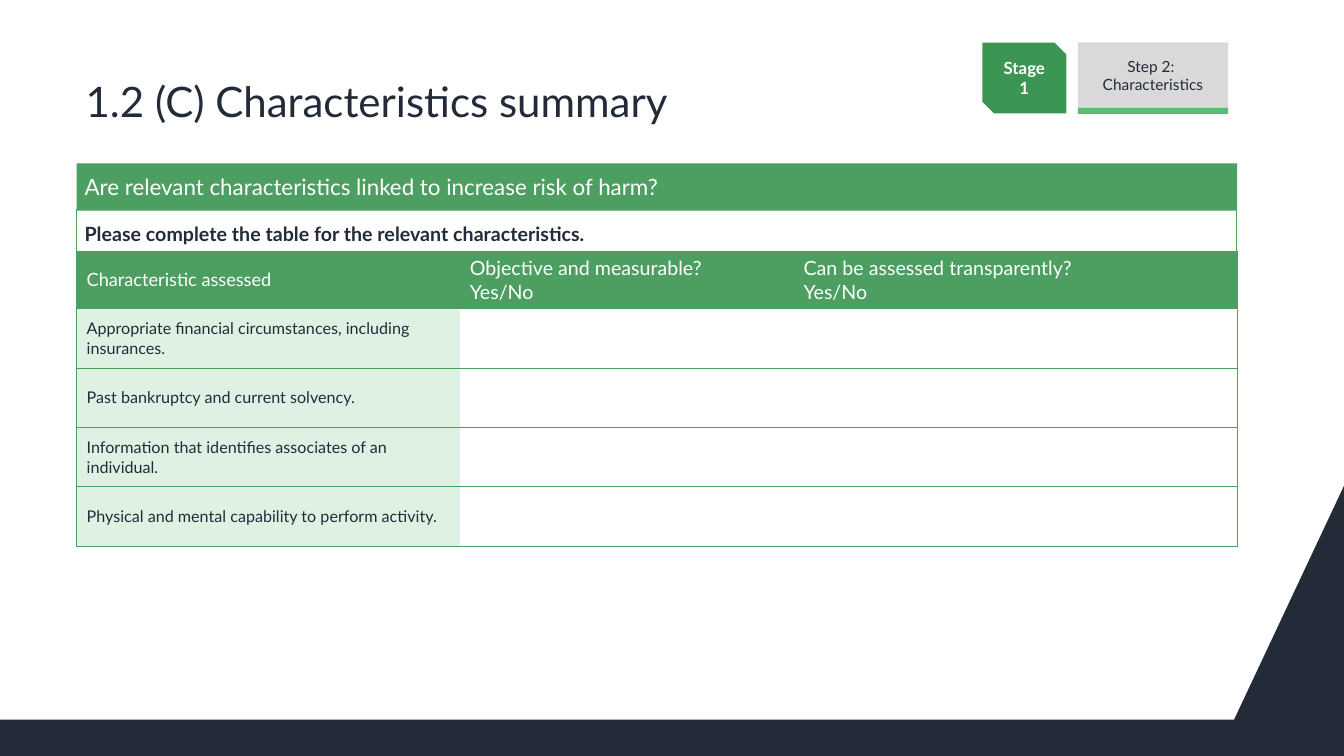
from lxml import etree
from pptx import Presentation
from pptx.dml.color import RGBColor
from pptx.enum.shapes import MSO_SHAPE
from pptx.enum.text import MSO_ANCHOR, PP_ALIGN
from pptx.oxml.ns import qn
from pptx.util import Inches, Pt

# Content
TITLE = "1.2 (C) Characteristics summary"
QUESTION = "Are relevant characteristics linked to increase risk of harm?"
INSTRUCTION = "Please complete the table for the relevant characteristics."
STAGE = "Stage 1"
STEP = "Step 2: \vCharacteristics"
HEADINGS = [
    ("Characteristic assessed", 13),
    ("Objective and measurable?\nYes/No", 14),
    ("Can be assessed transparently?\nYes/No", 14),
]
CHARACTERISTICS = [
    "Appropriate financial circumstances, including insurances.",
    "Past bankruptcy and current solvency.",
    "Information that identifies associates of an individual.",
    "Physical and mental capability to perform activity.",
]

THEME = {
    "font": "Lato",
    "navy": "232B39", "white": "FFFFFF", "green": "4C9E61",
    "stage": "3C9653", "accent": "5BBD74", "pale": "DEF2E3", "grey": "D9D9D9",
    "title": 30, "question": 16, "instruction": 14,
    "stage_size": 12, "step_size": 11, "body": 11.5,
}

# Layout in inches
SLIDE_WIDTH, SLIDE_HEIGHT = 13.33, 7.5
FOOTER = [(0, 7.14), (12.24, 7.14), (SLIDE_WIDTH, 4.82),
          (SLIDE_WIDTH, SLIDE_HEIGHT), (0, SLIDE_HEIGHT)]
LEFT, TABLE_TOP = 0.76, 2.49
COLUMN_WIDTHS = [3.8, 3.31, 4.4]
HEADER_HEIGHT, ROW_HEIGHT = 0.57, 0.59
WIDTH = sum(COLUMN_WIDTHS)
PANEL_INSETS = (0.08, 0.05, 0.08, 0.05)


def color(name):
    return RGBColor.from_string(THEME[name])


def write(frame, text, size, ink="navy", bold=False, align=PP_ALIGN.LEFT):
    frame.text = text
    frame.word_wrap = True
    for para in frame.paragraphs:
        para.alignment = align
        for span in para.runs:
            span.font.name = THEME["font"]
            span.font.size = Pt(size)
            span.font.bold = bold
            span.font.color.rgb = color(ink)


def paint(shape, fill=None, line=None, weight=0.75):
    shape.shadow.inherit = False
    if fill:
        shape.fill.solid()
        shape.fill.fore_color.rgb = color(fill)
    else:
        shape.fill.background()
    if line:
        shape.line.color.rgb = color(line)
        shape.line.width = Pt(weight)
    else:
        shape.line.fill.background()


def add_box(page, place, fill=None, line=None, weight=0.75, kind=MSO_SHAPE.RECTANGLE):
    box = page.shapes.add_shape(kind, *(Inches(value) for value in place))
    paint(box, fill, line, weight)
    return box


def set_frame(frame, insets, anchor=MSO_ANCHOR.MIDDLE):
    frame.margin_left, frame.margin_top, frame.margin_right, frame.margin_bottom = (
        Inches(value) for value in insets)
    frame.vertical_anchor = anchor


def set_borders(cell, visible):
    properties = cell._tc.get_or_add_tcPr()
    for side in "LRTB":
        edge = etree.SubElement(properties, qn(f"a:ln{side}"), w=str(Pt(0.5)))
        if side in visible:
            fill = etree.SubElement(edge, qn("a:solidFill"))
            etree.SubElement(fill, qn("a:srgbClr"), val=THEME["green"])
        else:
            etree.SubElement(edge, qn("a:noFill"))


def add_footer(page):
    points = [(Inches(x), Inches(y)) for x, y in FOOTER]
    builder = page.shapes.build_freeform(*points[0])
    builder.add_line_segments(points[1:], close=True)
    paint(builder.convert_to_shape(), "navy")


def add_panels(page):
    instruction = add_box(page, (LEFT, 2.08, 11.5, 0.77), line="green")
    set_frame(instruction.text_frame, (0.08, 0.12, 0.08, 0.05), MSO_ANCHOR.TOP)
    write(instruction.text_frame, INSTRUCTION, THEME["instruction"], bold=True)

    question = add_box(page, (LEFT, 1.62, WIDTH, 0.47), "green")
    set_frame(question.text_frame, PANEL_INSETS)
    write(question.text_frame, QUESTION, THEME["question"], "white")

    title = page.shapes.add_textbox(Inches(0.77), Inches(0.49), Inches(11.5), Inches(1.01))
    set_frame(title.text_frame, PANEL_INSETS)
    write(title.text_frame, TITLE, THEME["title"])


def add_table(page):
    rows, columns = len(CHARACTERISTICS) + 1, len(HEADINGS)
    height = HEADER_HEIGHT + ROW_HEIGHT * len(CHARACTERISTICS)
    table = page.shapes.add_table(rows, columns, Inches(LEFT), Inches(TABLE_TOP),
                                  Inches(WIDTH), Inches(height)).table
    table.first_row = table.horz_banding = False
    for column, width in zip(table.columns, COLUMN_WIDTHS):
        column.width = Inches(width)
    for index, row in enumerate(table.rows):
        row.height = Inches(ROW_HEIGHT if index else HEADER_HEIGHT)
        for position, cell in enumerate(row.cells):
            outer = {0: "L", columns - 1: "R"}.get(position, "")
            set_borders(cell, "TB" + outer)
            cell.vertical_anchor = MSO_ANCHOR.MIDDLE
            fill = "green" if index == 0 else "pale" if position == 0 else None
            if fill:
                cell.fill.solid()
                cell.fill.fore_color.rgb = color(fill)
            else:
                cell.fill.background()
            if index == 0:
                text, size = HEADINGS[position]
                write(cell.text_frame, text, size, "white")
            elif position == 0:
                write(cell.text_frame, CHARACTERISTICS[index - 1], THEME["body"])


def add_stage_marker(page):
    stage = add_box(page, (9.73, 0.41, 0.86, 0.73), "stage", "white", 2,
                    MSO_SHAPE.SNIP_2_DIAG_RECTANGLE)
    write(stage.text_frame, STAGE, THEME["stage_size"], "white", True, PP_ALIGN.CENTER)
    step = add_box(page, (10.69, 0.42, 1.49, 0.65), "grey")
    write(step.text_frame, STEP, THEME["step_size"], align=PP_ALIGN.CENTER)
    add_box(page, (10.69, 1.07, 1.49, 0.06), "accent")


def main():
    deck = Presentation()
    deck.slide_width, deck.slide_height = Inches(SLIDE_WIDTH), Inches(SLIDE_HEIGHT)
    page = deck.slides.add_slide(deck.slide_layouts[6])
    add_footer(page)
    add_panels(page)
    add_table(page)
    add_stage_marker(page)
    deck.save("out.pptx")


if __name__ == "__main__":
    main()
